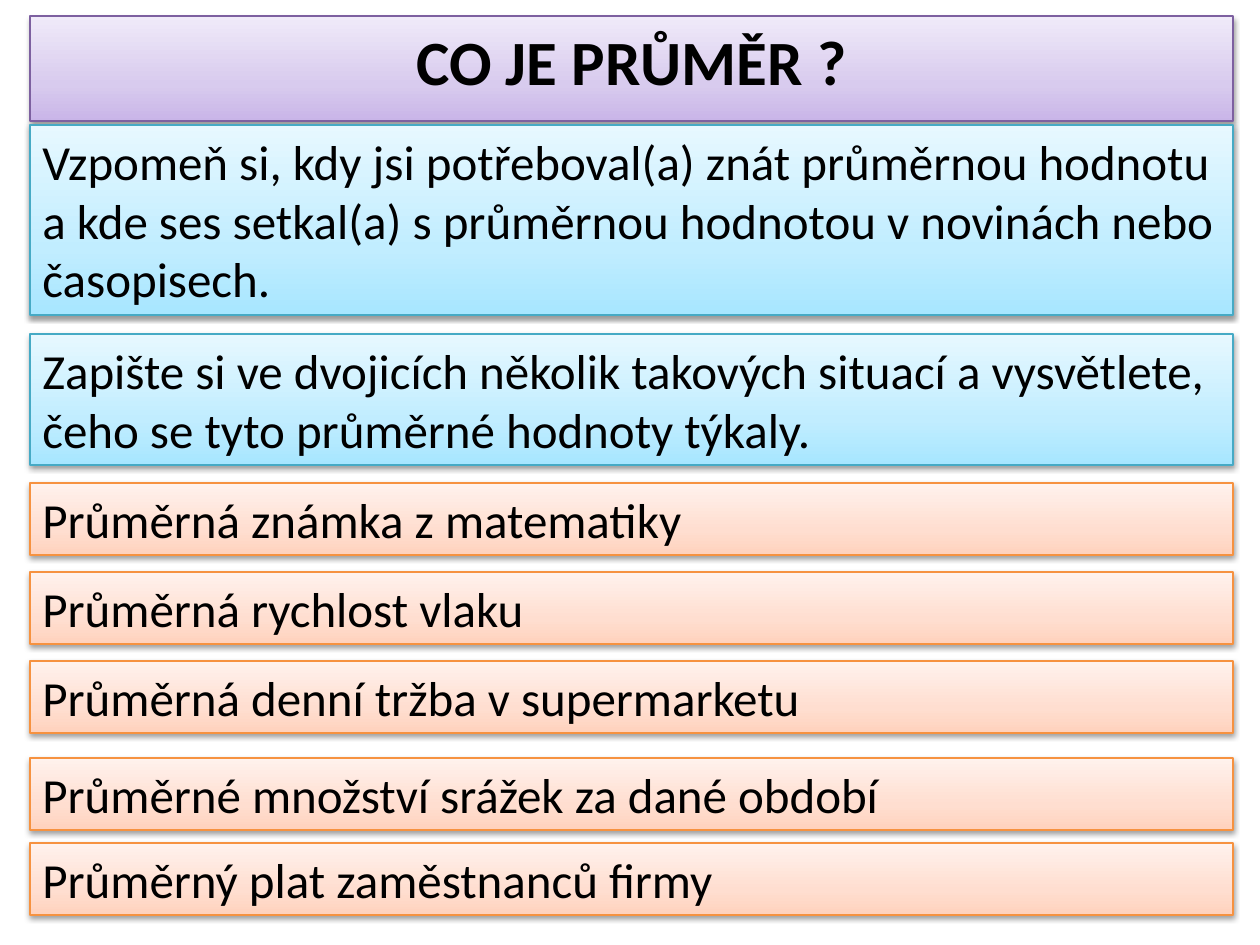
from copy import deepcopy

from lxml import etree
from pptx import Presentation
from pptx.dml.color import RGBColor
from pptx.enum.text import MSO_ANCHOR, MSO_AUTO_SIZE, PP_ALIGN
from pptx.oxml.ns import qn
from pptx.util import Pt

LEFT, CENTER = PP_ALIGN.LEFT, PP_ALIGN.CENTER
TOP = MSO_ANCHOR.TOP
GROW = MSO_AUTO_SIZE.SHAPE_TO_FIT_TEXT

# Content: text, top px
TITLE = "CO JE PRŮMĚR ?"
TASKS = [
    ("Vzpomeň si, kdy jsi potřeboval(a) znát průměrnou hodnotu\n"
     "a kde ses setkal(a) s průměrnou hodnotou v novinách nebo\n"
     "časopisech.", 125),
    ("Zapište si ve dvojicích několik takových situací a vysvětlete,\n"
     "čeho se tyto průměrné hodnoty týkaly.", 334),
]
EXAMPLES = [
    ("Průměrná známka z matematiky", 483),
    ("Průměrná rychlost vlaku", 572),
    ("Průměrná denní tržba v supermarketu", 661),
    ("Průměrné množství srážek za dané období", 758),
    ("Průměrný plat zaměstnanců firmy", 843),
]

THEME = {
    "font": "Calibri", "text": "000000", "title_size": 36, "body_size": 28,
    "stops": (0, 0.35, 1), "line_width": 0.75,
    "title": {"fill": ("C9B5E8", "D8CBEE", "F0EAF9"), "line": "7D60A0"},
    "task": {"fill": ("A7E6FF", "C1EDFF", "E7F8FF"), "line": "46AAC5"},
    "example": {"fill": ("FFD2BD", "FFDED0", "FFF2ED"), "line": "F69240"},
}

# Layout in px
SLIDE_W, SLIDE_H = 1260, 945
BOX_LEFT, BOX_W = 30, 1203
TITLE_TOP, TITLE_H = 16, 89
LINE_H, PADDING = 59, 13


def px(n):
    return round(n * 914400 / 126)


def color(code):
    return RGBColor.from_string(code)


def add_shadow(box):
    props = box._element.spPr
    effects = etree.SubElement(props, qn("a:effectLst"))
    shadow = etree.SubElement(effects, qn("a:outerShdw"), blurRad="40000",
                              dist="20000", dir="5400000", rotWithShape="0")
    black = etree.SubElement(shadow, qn("a:srgbClr"), val="000000")
    etree.SubElement(black, qn("a:alpha"), val="38000")


def paint(box, style):
    box.fill.gradient()
    box.fill.gradient_angle = 90
    stop_list = box._element.spPr.find(qn("a:gradFill")).find(qn("a:gsLst"))
    stop_list.append(deepcopy(stop_list[-1]))
    stops = zip(box.fill.gradient_stops, THEME["stops"], style["fill"])
    for stop, position, code in stops:
        stop.position = position
        stop.color.rgb = color(code)
    box.line.color.rgb = color(style["line"])
    box.line.width = Pt(THEME["line_width"])
    add_shadow(box)


def write(box, text, size, align, bold=False):
    frame = box.text_frame
    frame.text = text
    frame.word_wrap = True
    frame.auto_size = GROW
    frame.vertical_anchor = TOP
    for paragraph in frame.paragraphs:
        paragraph.alignment = align
        for run in paragraph.runs:
            run.font.name = THEME["font"]
            run.font.size = Pt(size)
            run.font.bold = bold
            run.font.color.rgb = color(THEME["text"])


def main():
    deck = Presentation()
    deck.slide_width, deck.slide_height = px(SLIDE_W), px(SLIDE_H)
    slide = deck.slides.add_slide(deck.slide_layouts[5])

    # Title bar
    title = slide.shapes.title
    title.left, title.top = px(BOX_LEFT), px(TITLE_TOP)
    title.width, title.height = px(BOX_W), px(TITLE_H)
    paint(title, THEME["title"])
    write(title, TITLE, THEME["title_size"], CENTER, bold=True)

    # Tasks, then examples of averages
    for kind, entries in (("task", TASKS), ("example", EXAMPLES)):
        for text, top in entries:
            height = PADDING + LINE_H * len(text.split("\n"))
            box = slide.shapes.add_textbox(px(BOX_LEFT), px(top),
                                           px(BOX_W), px(height))
            paint(box, THEME[kind])
            write(box, text, THEME["body_size"], LEFT)

    deck.save("out.pptx")


if __name__ == "__main__":
    main()
